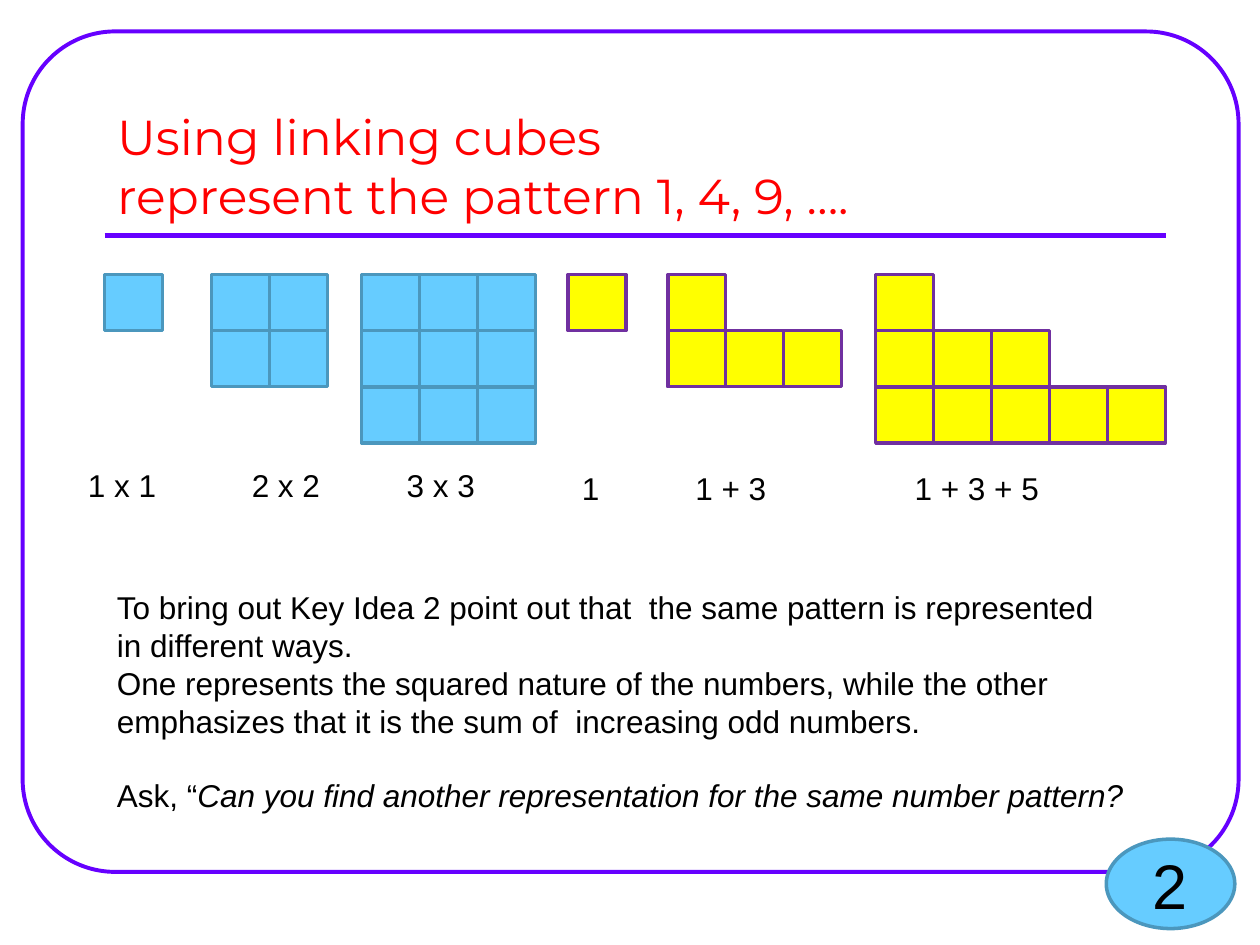
from lxml import etree
from pptx import Presentation
from pptx.dml.color import RGBColor
from pptx.enum.shapes import MSO_CONNECTOR, MSO_SHAPE
from pptx.enum.text import MSO_ANCHOR, PP_ALIGN
from pptx.oxml.ns import qn
from pptx.util import Inches, Pt

CELL_W, CELL_H = 0.46, 0.445
GRID_TOP = 2.18
LEFT, RIGHT = 0.83, 9.25
PURPLE = "6600FF"
BLUE = ("66CCFF", "4B97BD")
YELLOW = ("FFFF00", "7030A0")
SQUARES = [(0.83, [1]), (1.68, [2, 2]), (2.87, [3, 3, 3])]
ODD_SUMS = [(4.51, [1]), (5.3, [1, 3]), (6.95, [1, 3, 5])]
BODY = [
    [("To bring out Key Idea 2 point out that  the same pattern is represented in different ways.", False)],
    [("One represents the squared nature of the numbers, while the other "
      "emphasizes that it is the sum of  increasing odd numbers.", False)],
    [("Ask, “", False),
     ("Can you find another representation for the same number pattern?", True)],
]


def color(value):
    return RGBColor.from_string(value)


def box(*lengths):
    return [Inches(n) for n in lengths]


def style_font(p, size, name="Arial", ink="000000"):
    p.font.size = Pt(size)
    p.font.name = name
    p.font.color.rgb = color(ink)


def add_shape(s, kind, at, fill, line, width=2):
    sp = s.shapes.add_shape(kind, *box(*at))
    sp.shadow.inherit = False
    if fill:
        sp.fill.solid()
        sp.fill.fore_color.rgb = color(fill)
    else:
        sp.fill.background()
    sp.line.color.rgb = color(line)
    sp.line.width = Pt(width)
    return sp


def add_frame(s):
    frame = add_shape(s, MSO_SHAPE.ROUNDED_RECTANGLE, (0.18, 0.25, 9.65, 6.67), None, PURPLE, 2.25)
    frame.adjustments[0] = 0.11
    rule = s.shapes.add_connector(MSO_CONNECTOR.STRAIGHT, *box(LEFT, 1.87, RIGHT, 1.87))
    rule.line.color.rgb = color(PURPLE)
    rule.line.width = Pt(3)
    etree.SubElement(rule._element.spPr, qn("a:effectLst"))


def set_title(s, text):
    sp = s.shapes.title
    sp.left, sp.top, sp.width, sp.height = box(LEFT, 0.58, RIGHT - LEFT, 1.25)
    tf = sp.text_frame
    tf.text = text
    tf.vertical_anchor = MSO_ANCHOR.BOTTOM
    p = tf.paragraphs[0]
    p.alignment = PP_ALIGN.LEFT
    style_font(p, 28, "Montserrat", "FF0000")


def add_cubes(s, left, row_lengths, colors):
    for row, length in enumerate(row_lengths):
        for col in range(length):
            at = (left + col * CELL_W, GRID_TOP + row * CELL_H, CELL_W, CELL_H)
            add_shape(s, MSO_SHAPE.RECTANGLE, at, *colors)


def add_text(s, at, paragraphs):
    tf = s.shapes.add_textbox(*box(*at)).text_frame
    tf.word_wrap = True
    for i, runs in enumerate(paragraphs):
        p = tf.add_paragraph() if i else tf.paragraphs[0]
        style_font(p, 18)
        for text, italic in runs:
            r = p.add_run()
            r.text = text
            if italic:
                r.font.italic = True
    return tf


def add_labels(s, at, labels, stops):
    p = add_text(s, at, [[("\t".join(labels), False)]]).paragraphs[0]
    tabs = etree.Element(qn("a:tabLst"))
    for stop in stops:
        etree.SubElement(tabs, qn("a:tab"), pos=str(Inches(stop)), algn="l")
    p._p.get_or_add_pPr().insert(0, tabs)


def add_badge(s, text):
    sp = add_shape(s, MSO_SHAPE.OVAL, (8.78, 6.66, 1.02, 0.71), *BLUE)
    tf = sp.text_frame
    tf.text = text
    tf.vertical_anchor = MSO_ANCHOR.MIDDLE
    p = tf.paragraphs[0]
    p.alignment = PP_ALIGN.CENTER
    style_font(p, 36)


def main():
    prs = Presentation()
    prs.slide_width, prs.slide_height = box(10, 7.5)
    s = prs.slides.add_slide(prs.slide_layouts[5])
    add_frame(s)
    set_title(s, "Using linking cubes\vrepresent the pattern 1, 4, 9, ….")
    for figures, colors in ((SQUARES, BLUE), (ODD_SUMS, YELLOW)):
        for left, row_lengths in figures:
            add_cubes(s, left, row_lengths, colors)
    body = add_text(s, (LEFT, 4.62, 8.2, 1.92), BODY)
    body.paragraphs[-1].space_before = Pt(21)
    add_labels(s, (0.6, 3.65, 3.56, 0.4), ["1 x 1", "2 x 2", "3 x 3"], [1.3, 2.53])
    add_labels(s, (4.52, 3.67, 4.28, 0.4), ["1", "1 + 3", "1 + 3 + 5"], [0.9, 2.64])
    add_badge(s, "2")
    prs.save("out.pptx")


if __name__ == "__main__":
    main()
